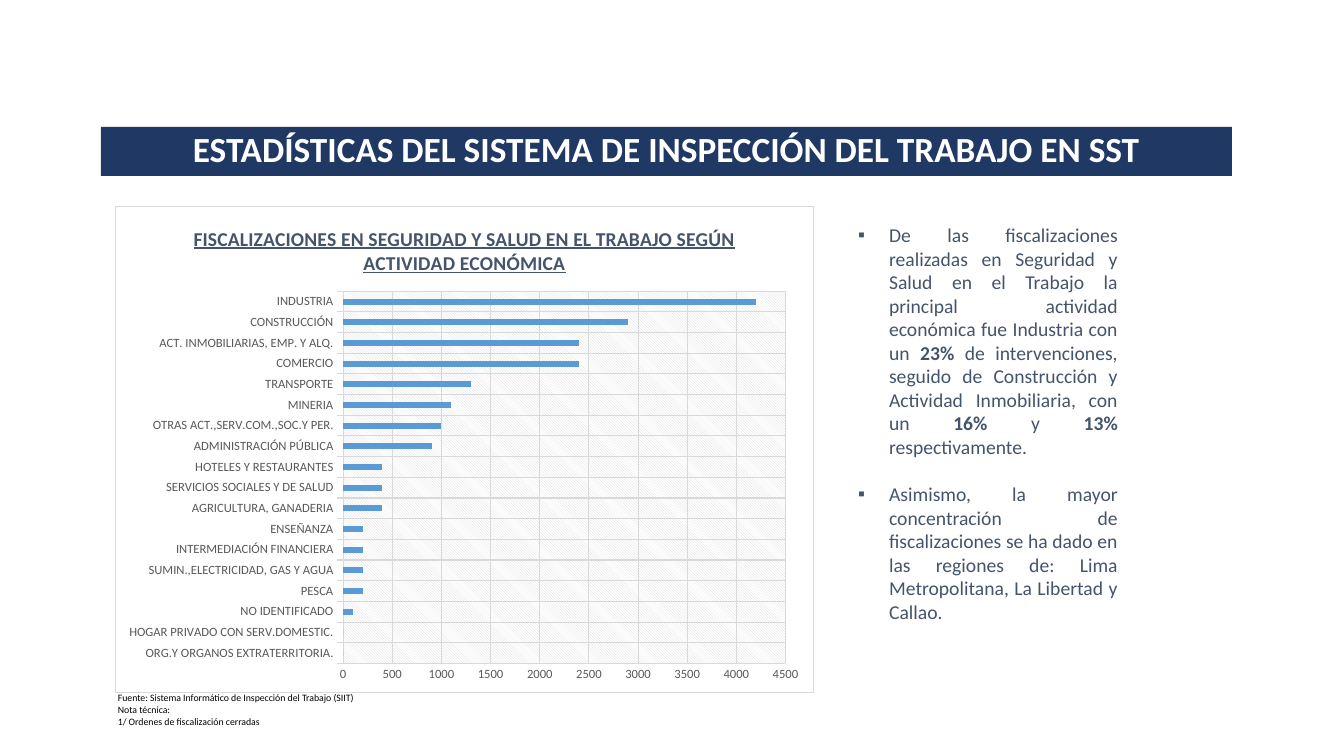
from lxml import etree
from pptx import Presentation
from pptx.chart.data import CategoryChartData
from pptx.dml.color import RGBColor
from pptx.enum.chart import XL_CHART_TYPE, XL_TICK_MARK
from pptx.enum.dml import MSO_PATTERN
from pptx.enum.text import MSO_ANCHOR, MSO_AUTO_SIZE, PP_ALIGN
from pptx.oxml import parse_xml
from pptx.oxml.ns import nsdecls, qn
from pptx.util import Emu, Pt

BAR = XL_CHART_TYPE.BAR_CLUSTERED
TICK_OUT, TICK_NONE = XL_TICK_MARK.OUTSIDE, XL_TICK_MARK.NONE
CENTER, JUSTIFY = PP_ALIGN.CENTER, PP_ALIGN.JUSTIFY
MIDDLE, TOP = MSO_ANCHOR.MIDDLE, MSO_ANCHOR.TOP
NO_FIT = MSO_AUTO_SIZE.NONE

EMU_PER_PX = 914400 / 100.8
FONT = "Calibri"
NAVY, SLATE, BLUE = "203864", "44546A", "5B9BD5"
GRID, GREY, WHITE, BLACK = "D9D9D9", "595959", "FFFFFF", "000000"

INSPECTIONS = [
    ("ORG.Y ORGANOS EXTRATERRITORIA.", 0),
    ("HOGAR PRIVADO CON SERV.DOMESTIC.", 0),
    ("NO IDENTIFICADO", 100),
    ("PESCA", 200),
    ("SUMIN.,ELECTRICIDAD, GAS Y AGUA", 200),
    ("INTERMEDIACIÓN FINANCIERA", 200),
    ("ENSEÑANZA", 200),
    ("AGRICULTURA, GANADERIA", 400),
    ("SERVICIOS SOCIALES Y DE SALUD", 400),
    ("HOTELES Y RESTAURANTES", 400),
    ("ADMINISTRACIÓN PÚBLICA", 900),
    ("OTRAS ACT.,SERV.COM.,SOC.Y PER.", 1000),
    ("MINERIA", 1100),
    ("TRANSPORTE", 1300),
    ("COMERCIO", 2400),
    ("ACT. INMOBILIARIAS, EMP. Y ALQ.", 2400),
    ("CONSTRUCCIÓN", 2900),
    ("INDUSTRIA", 4200),
]

# Each finding is a list of (text, bold) runs
FINDINGS = [
    [("De las fiscalizaciones realizadas en Seguridad y Salud en el Trabajo "
      "la principal actividad económica fue Industria con un ", False),
     ("23%", True),
     (" de intervenciones, seguido de Construcción y Actividad Inmobiliaria, con un ", False),
     ("16%", True), (" y ", False), ("13%", True), (" respectivamente.", False)],
    [("Asimismo, la mayor concentración de fiscalizaciones se ha dado en las "
      "regiones de: Lima Metropolitana, La Libertad y Callao.", False)],
]

SOURCE_NOTES = [
    "Fuente: Sistema Informático de Inspección del Trabajo (SIIT)",
    "Nota técnica:",
    "1/ Ordenes de fiscalización cerradas",
]


def px(length):
    return Emu(round(length * EMU_PER_PX))


def rgb(value):
    return RGBColor.from_string(value)


def style(font, size, color, bold=False):
    font.name, font.size, font.bold = FONT, Pt(size), bold
    font.color.rgb = rgb(color)


def add_run(paragraph, text, size, color, bold=False):
    run = paragraph.add_run()
    run.text = text
    style(run.font, size, color, bold)
    return run


def place(shape, box):
    shape.left, shape.top, shape.width, shape.height = map(px, box)


def paragraph_at(frame, index):
    return frame.paragraphs[0] if index == 0 else frame.add_paragraph()


def build_banner(slide, box):
    banner = slide.shapes.title
    place(banner, box)
    banner.fill.solid()
    banner.fill.fore_color.rgb = rgb(NAVY)
    frame = banner.text_frame
    frame.auto_size, frame.word_wrap, frame.vertical_anchor = NO_FIT, True, MIDDLE
    heading = frame.paragraphs[0]
    heading.alignment, heading.line_spacing = CENTER, 0.9
    add_run(heading, "ESTADÍSTICAS DEL SISTEMA DE INSPECCIÓN DEL TRABAJO EN SST",
            25.2, WHITE, True)


def style_axis(axis, tick):
    axis.major_tick_mark, axis.minor_tick_mark = tick, TICK_NONE
    axis.has_major_gridlines = True
    grid = axis.major_gridlines.format.line
    grid.color.rgb, grid.width = rgb(GRID), Pt(0.75)
    style(axis.tick_labels.font, 9, GREY)


def fill_plot_and_frame(chart, plot_box, chart_box):
    """Fix the plot area inside the chart and paint both backgrounds."""
    space = chart.element
    plot_area = space.find(".//" + qn("c:plotArea"))
    for old in plot_area.findall(qn("c:layout")):
        plot_area.remove(old)
    left, top, width, height = chart_box
    fractions = {
        "x": (plot_box[0] - left) / width, "y": (plot_box[1] - top) / height,
        "w": plot_box[2] / width, "h": plot_box[3] / height,
    }
    layout = parse_xml(f"<c:layout {nsdecls('c')}><c:manualLayout/></c:layout>")
    manual = layout[0]
    settings = [("layoutTarget", "inner"), ("xMode", "edge"), ("yMode", "edge")]
    settings += [(key, f"{value:.4f}") for key, value in fractions.items()]
    for tag, value in settings:
        etree.SubElement(manual, qn("c:" + tag)).set("val", value)
    plot_area.insert(0, layout)
    plot_area.append(parse_xml(
        f'<c:spPr {nsdecls("c", "a")}><a:pattFill prst="ltDnDiag">'
        f'<a:fgClr><a:srgbClr val="{GRID}"/></a:fgClr>'
        f'<a:bgClr><a:srgbClr val="{WHITE}"/></a:bgClr></a:pattFill></c:spPr>'))
    space.find(qn("c:chart")).addnext(parse_xml(
        f'<c:spPr {nsdecls("c", "a")}><a:solidFill><a:srgbClr val="{WHITE}"/></a:solidFill>'
        f'<a:ln w="9525"><a:solidFill><a:srgbClr val="{GRID}"/></a:solidFill></a:ln></c:spPr>'))


def build_chart(slide, box):
    data = CategoryChartData()
    data.categories = [activity for activity, _ in INSPECTIONS]
    data.add_series("Series 1", [count for _, count in INSPECTIONS])
    chart = slide.shapes.add_chart(BAR, *map(px, box), data).chart
    style(chart.font, 10, BLACK)
    chart.has_legend = False

    # Title
    chart.has_title = True
    heading = chart.chart_title.text_frame.paragraphs[0]
    run = add_run(heading, "FISCALIZACIONES EN SEGURIDAD Y SALUD EN EL TRABAJO "
                  "SEGÚN ACTIVIDAD ECONÓMICA", 14, SLATE, True)
    run.font.underline = True
    chart.chart_title.include_in_layout = False

    # Axes
    activities, counts = chart.category_axis, chart.value_axis
    style_axis(activities, TICK_OUT)
    activities.format.line.color.rgb = rgb(GRID)
    activities.format.line.width = Pt(0.75)
    style_axis(counts, TICK_NONE)
    counts.format.line.fill.background()
    counts.minimum_scale, counts.maximum_scale, counts.major_unit = 0, 4500, 500

    # Bars
    plot = chart.plots[0]
    plot.gap_width, plot.vary_by_categories = 247, False
    bars = plot.series[0].format.fill
    bars.solid()
    bars.fore_color.rgb = rgb(BLUE)

    left, top, width, height = box
    plot_box = (left + 228, top + 85, width - 256, height - 114)
    fill_plot_and_frame(chart, plot_box, box)


def build_findings(slide, box):
    body = slide.placeholders[1]
    place(body, box)
    frame = body.text_frame
    frame.auto_size, frame.word_wrap, frame.vertical_anchor = NO_FIT, True, TOP
    for index, finding in enumerate(FINDINGS):
        paragraph = paragraph_at(frame, index)
        properties = paragraph._p.get_or_add_pPr()
        properties.set("marL", str(px(31)))
        properties.set("indent", str(-px(31)))
        etree.SubElement(properties, qn("a:buFont")).set("typeface", "Arial")
        etree.SubElement(properties, qn("a:buChar")).set("char", "▪")
        paragraph.alignment = JUSTIFY
        paragraph.line_spacing = 1.0
        paragraph.space_before = Pt(17 if index else 0)
        for text, bold in finding:
            add_run(paragraph, text, 14, SLATE, bold)


def build_source_notes(slide, box):
    frame = slide.shapes.add_textbox(*map(px, box)).text_frame
    frame.word_wrap = False
    for index, note in enumerate(SOURCE_NOTES):
        add_run(paragraph_at(frame, index), note, 7, BLACK)


def main():
    deck = Presentation()
    deck.slide_width, deck.slide_height = px(1344), px(756)
    slide = deck.slides.add_slide(deck.slide_layouts[1])
    build_banner(slide, (101, 127, 1131, 49))
    build_source_notes(slide, (108, 687, 262, 45))
    build_chart(slide, (115, 206, 699, 487))
    build_findings(slide, (848, 218, 280, 414))
    deck.save("out.pptx")


if __name__ == "__main__":
    main()
